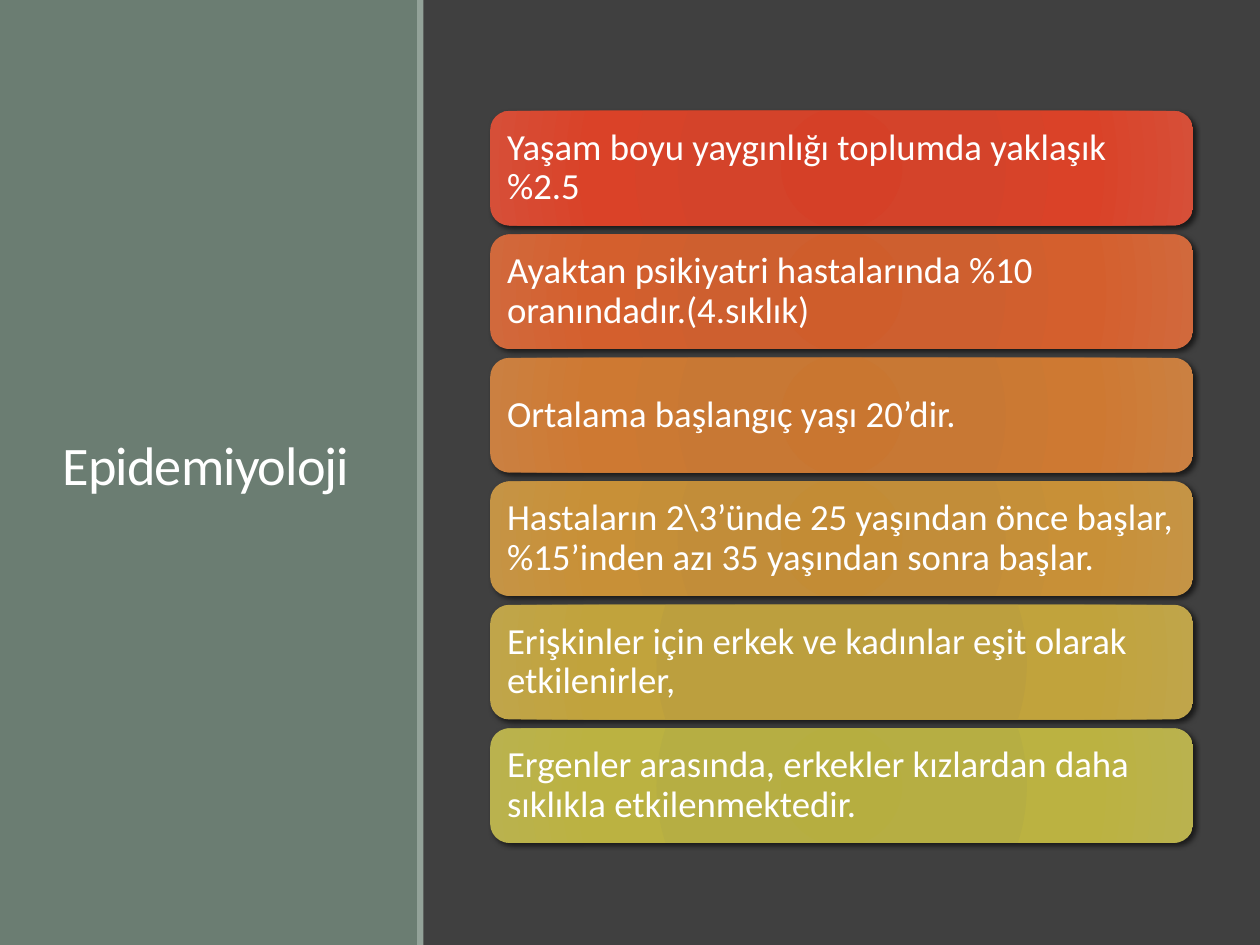
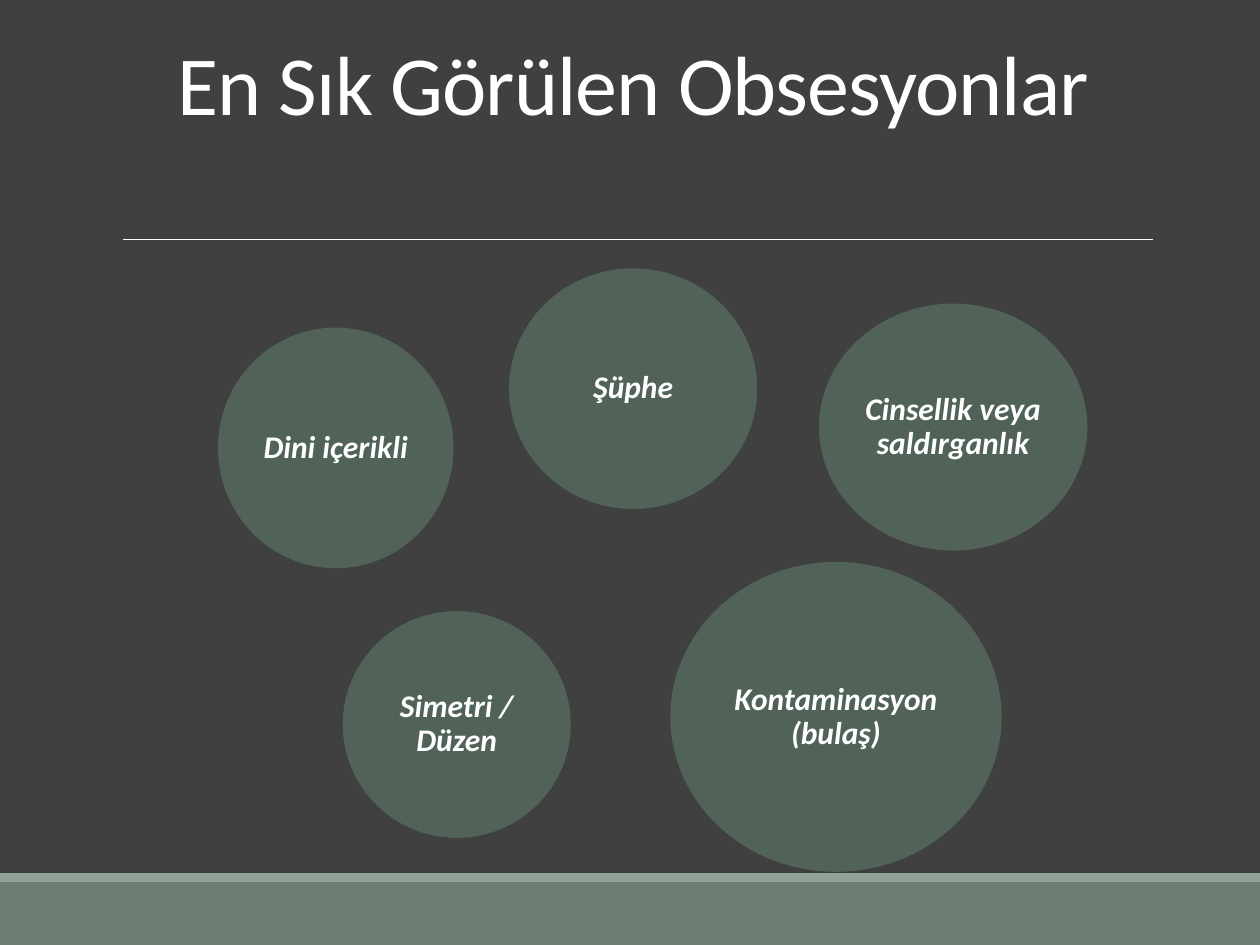
"""Builds the slides "Epidemiyoloji" and "En Sık Görülen Obsesyonlar"."""
from lxml import etree
from pptx import Presentation
from pptx import util as u
from pptx.dml.color import RGBColor
from pptx.enum import shapes, text
from pptx.oxml import parse_xml
from pptx.oxml.ns import nsdecls, qn

DARK = RGBColor(0x40, 0x40, 0x40)
SAGE = RGBColor(0x6B, 0x7D, 0x72)
PALE_SAGE = RGBColor(0x93, 0xA2, 0x99)
BUBBLE = RGBColor(0x62, 0x86, 0x70)
WHITE = RGBColor(0xFF, 0xFF, 0xFF)
BLACK = RGBColor(0x00, 0x00, 0x00)
RED = [RGBColor(0xD5, 0x40, 0x27), RGBColor(0xD4, 0x43, 0x2A),
       RGBColor(0xDA, 0x42, 0x28), RGBColor(0xD6, 0x4F, 0x38)]
ORANGE = [RGBColor(0xCF, 0x5D, 0x2B), RGBColor(0xCE, 0x5F, 0x2F),
          RGBColor(0xD4, 0x5F, 0x2D), RGBColor(0xD1, 0x69, 0x3C)]
AMBER = [RGBColor(0xC9, 0x76, 0x30), RGBColor(0xC8, 0x78, 0x34),
         RGBColor(0xCE, 0x79, 0x32), RGBColor(0xCB, 0x80, 0x41)]
OCHRE = [RGBColor(0xC3, 0x8C, 0x35), RGBColor(0xC2, 0x8D, 0x39),
         RGBColor(0xC8, 0x90, 0x37), RGBColor(0xC5, 0x94, 0x45)]
GOLD = [RGBColor(0xBD, 0x9F, 0x3B), RGBColor(0xBC, 0x9F, 0x3E),
        RGBColor(0xC1, 0xA3, 0x3C), RGBColor(0xC0, 0xA5, 0x4A)]
OLIVE = [RGBColor(0xB6, 0xAE, 0x40), RGBColor(0xB6, 0xAE, 0x43),
         RGBColor(0xBB, 0xB2, 0x41), RGBColor(0xBA, 0xB2, 0x4E)]
STOPS = (0, 34, 70, 100)
FONT = "Calibri"
TITLE = dict(spacing=0.85, tracking=-0.5)
KIND = shapes.MSO_SHAPE
MIDDLE, BOTTOM = text.MSO_ANCHOR.MIDDLE, text.MSO_ANCHOR.BOTTOM
LEFT, CENTER = text.PP_ALIGN.LEFT, text.PP_ALIGN.CENTER


def add_plain(page, kind, place, color):
    shape = page.shapes.add_shape(kind, *map(u.Inches, place))
    shape.shadow.inherit = False
    shape.fill.solid()
    shape.fill.fore_color.rgb = color
    shape.line.fill.background()
    return shape


def write(box, words, size, align=LEFT, anchor=MIDDLE, spacing=0.9, inset=None,
          bold=False, italic=False, tracking=None):
    frame = box.text_frame
    frame.word_wrap = True
    frame.vertical_anchor = anchor
    if inset is not None:
        frame.margin_left = frame.margin_right = u.Inches(inset)
        frame.margin_top = frame.margin_bottom = u.Inches(inset)
    para = frame.paragraphs[0]
    para.alignment = align
    para.line_spacing = spacing
    span = para.add_run()
    span.text = words
    span.font.name = FONT
    span.font.size = u.Pt(size)
    span.font.bold = bold
    span.font.italic = italic
    span.font.color.rgb = WHITE
    if tracking is not None:
        span.font._element.set("spc", str(int(tracking * 100)))


deck = Presentation()
deck.slide_width, deck.slide_height = u.Inches(10), u.Inches(7.5)
pages = []
for _ in range(2):
    page = deck.slides.add_slide(deck.slide_layouts[6])
    page.background.fill.solid()
    page.background.fill.fore_color.rgb = DARK
    pages.append(page)
epidemiology, obsessions = pages

add_plain(epidemiology, KIND.RECTANGLE, (0, 0, 3.32, 7.5), SAGE)
add_plain(epidemiology, KIND.RECTANGLE, (3.31, 0, 0.05, 7.5), PALE_SAGE)
title = epidemiology.shapes.add_textbox(*map(u.Inches, (0.4, 0.57, 2.53, 6.31)))
write(title, "Epidemiyoloji", 31, **TITLE)

facts = [
    ("Yaşam boyu yaygınlığı toplumda yaklaşık %2.5", RED),
    ("Ayaktan psikiyatri hastalarında %10 oranındadır.(4.sıklık)", ORANGE),
    ("Ortalama başlangıç yaşı 20’dir.", AMBER),
    ("Hastaların 2\\3’ünde 25 yaşından önce başlar, %15’inden azı 35 yaşından sonra başlar.",
     OCHRE),
    ("Erişkinler için erkek ve kadınlar eşit olarak etkilenirler,", GOLD),
    ("Ergenler arasında, erkekler kızlardan daha sıklıkla etkilenmektedir.", OLIVE),
]
for row, (words, colors) in enumerate(facts):
    card = add_plain(epidemiology, KIND.ROUNDED_RECTANGLE,
                     (3.89, 0.88 + 0.98 * row, 5.58, 0.91), colors[0])
    stops = "".join(f'<a:gs pos="{stop * 1000}"><a:srgbClr val="{color}"/></a:gs>'
                    for stop, color in zip(STOPS, colors))
    gradient = parse_xml(
        f'<a:gradFill {nsdecls("a")} rotWithShape="1"><a:gsLst>{stops}</a:gsLst>'
        '<a:path path="circle"><a:fillToRect l="100000" t="100000" r="100000" b="100000"/>'
        '</a:path></a:gradFill>')
    properties = card._element.spPr
    properties.replace(properties.find(qn("a:solidFill")), gradient)
    shadow = parse_xml(
        f'<a:outerShdw {nsdecls("a")} blurRad="38100" dist="25400" dir="2700000" rotWithShape="0">'
        f'<a:srgbClr val="{BLACK}"><a:alpha val="60000"/></a:srgbClr></a:outerShdw>')
    properties.find(qn("a:effectLst")).append(shadow)
    write(card, words, 21, inset=0.09)

add_plain(obsessions, KIND.RECTANGLE, (0, 7, 10, 0.5), SAGE)
add_plain(obsessions, KIND.RECTANGLE, (0, 6.93, 10, 0.07), PALE_SAGE)
rule = obsessions.shapes.add_connector(shapes.MSO_CONNECTOR.STRAIGHT,
                                       *map(u.Inches, (0.98, 1.9, 9.15, 1.9)))
rule.line.color.rgb = WHITE
rule.line.width = u.Pt(0.5)
etree.SubElement(rule._element.spPr, qn("a:effectLst"))
title = obsessions.shapes.add_textbox(*map(u.Inches, (0.9, 0.31, 8.25, 0.79)))
write(title, "En Sık Görülen Obsesyonlar", 48, align=CENTER, anchor=BOTTOM, **TITLE)

bubbles = [
    ("Kontaminasyon (bulaş)", (5.32, 4.46, 2.63, 2.46)),
    ("Şüphe", (4.04, 2.13, 1.97, 1.91)),
    ("Cinsellik veya saldırganlık", (6.5, 2.41, 2.13, 1.96)),
    ("Simetri / Düzen", (2.72, 4.85, 1.81, 1.8)),
    ("Dini içerikli", (1.73, 2.6, 1.87, 1.91)),
]
for words, place in bubbles:
    bubble = add_plain(obsessions, KIND.OVAL, place, BUBBLE)
    color = bubble._element.spPr.find(qn("a:solidFill"))[0]
    etree.SubElement(color, qn("a:alpha"), val="50000")
    write(bubble, words, 18, align=CENTER, inset=0.03, bold=True, italic=True)

deck.save("out.pptx")
